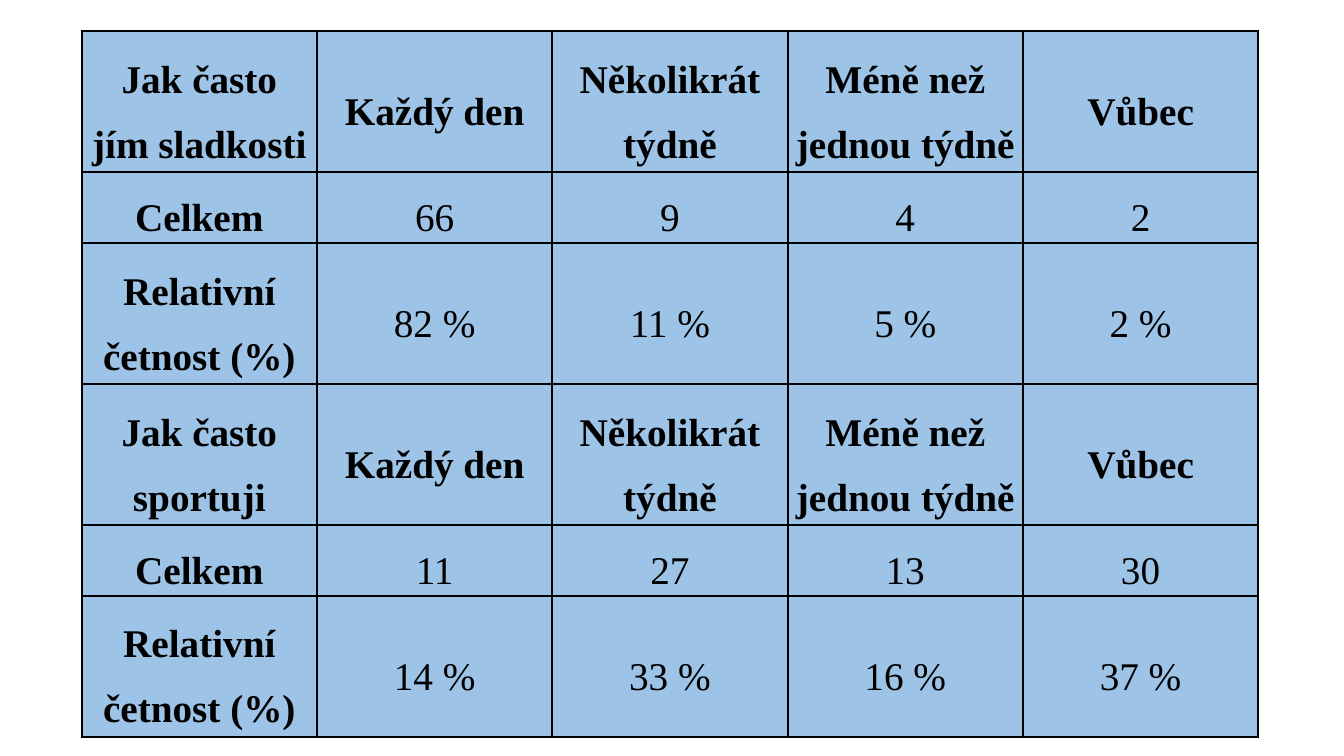
"""Build a slide with a frequency table on eating sweets and doing sport."""
from lxml import etree
from pptx import Presentation, util as u
from pptx.dml.color import RGBColor
from pptx.enum import text
from pptx.oxml import ns


def color(value):
    return RGBColor.from_string(value)


def add_borders(cell, value, width):
    tc_pr = cell._tc.get_or_add_tcPr()
    for side in ("lnL", "lnR", "lnT", "lnB"):
        ln = etree.SubElement(tc_pr, ns.qn(f"a:{side}"), w=str(u.Pt(width)))
        fill = etree.SubElement(ln, ns.qn("a:solidFill"))
        etree.SubElement(fill, ns.qn("a:srgbClr"), val=value)


prs = Presentation()
prs.slide_width, prs.slide_height = u.Inches(13.33), u.Inches(7.5)
s = prs.slides.add_slide(prs.slide_layouts[6])

answers = ["Každý den", "Několikrát týdně", "Méně než jednou týdně", "Vůbec"]
surveys = [
    ("Jak často jím sladkosti", [66, 9, 4, 2], [82, 11, 5, 2]),
    ("Jak často sportuji", [11, 27, 13, 30], [14, 33, 16, 37]),
]
rows = []
for question, totals, shares in surveys:
    rows += [
        [question, *answers],
        ["Celkem", *map(str, totals)],
        ["Relativní četnost (%)", *(f"{share} %" for share in shares)],
    ]

width, unit = u.Inches(11.67), u.Inches(0.7)
table = s.shapes.add_table(len(rows), len(rows[0]), u.Inches(0.81), u.Inches(0.31),
                           width, 10 * unit).table
for column in table.columns:
    column.width = width // len(rows[0])
for i, row in enumerate(table.rows):
    row.height = unit if i % 3 == 1 else 2 * unit

cell_format = {"margin_left": u.Inches(0.07), "margin_right": u.Inches(0.07),
               "margin_top": 0, "margin_bottom": 0,
               "vertical_anchor": text.MSO_ANCHOR.MIDDLE}
paragraph_format = {"alignment": text.PP_ALIGN.CENTER, "line_spacing": 1.5,
                    "space_after": u.Pt(10)}
font_format = {"name": "Times New Roman", "size": u.Pt(28)}

for i, values in enumerate(rows):
    for j, value in enumerate(values):
        cell = table.cell(i, j)
        add_borders(cell, "000000", 1.5)
        cell.fill.solid()
        cell.fill.fore_color.rgb = color("9DC3E6")
        p = cell.text_frame.paragraphs[0]
        r = p.add_run()
        r.text = value
        r.font.bold = i % 3 == 0 or j == 0
        r.font.color.rgb = color("000000")
        for target, settings in ((cell, cell_format), (p, paragraph_format),
                                 (r.font, font_format)):
            for name, setting in settings.items():
                setattr(target, name, setting)

prs.save("out.pptx")
